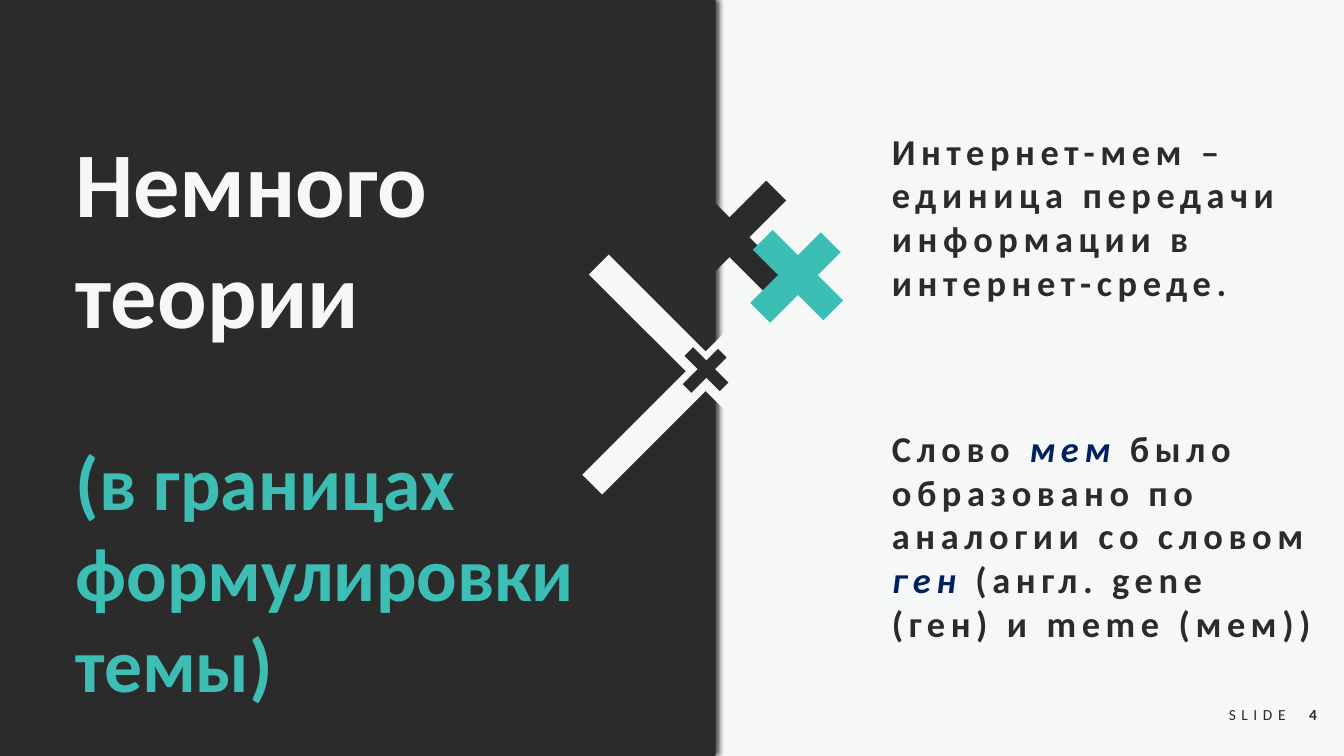
from dataclasses import dataclass

from lxml.etree import SubElement
from pptx import Presentation
from pptx.dml.color import RGBColor
from pptx.enum.shapes import MSO_CONNECTOR as CONN, MSO_SHAPE as SHAPE
from pptx.enum.text import MSO_ANCHOR as ANCHOR, PP_ALIGN as ALIGN
from pptx.oxml.ns import qn
from pptx.util import Inches, Pt

COLS, ROWS = 32, 18
CELL = Inches(7.5) / ROWS


@dataclass(frozen=True)
class Theme:
    font: str = "Calibri"
    dark: str = "2B2B2B"
    light: str = "F6F8F8"
    teal: str = "3CBEB4"
    navy: str = "002060"
    title: int = 66
    subtitle: int = 54
    body: int = 26
    footer: int = 11
    tracking: int = 4
    thick: float = 20
    thin: float = 8.75


T = Theme()


def rgb(color):
    return RGBColor.from_string(color)


def grid(*cells):
    """Turn counts of square grid cells into slide lengths."""
    return [round(c * CELL) for c in cells]


def style(font, size, color, bold=True):
    font.name, font.size, font.bold = T.font, Pt(size), bold
    font.color.rgb = rgb(color)


def add_panel(s, box):
    panel = s.shapes.add_shape(SHAPE.RECTANGLE, *grid(*box))
    panel.fill.solid()
    panel.fill.fore_color.rgb = rgb(T.dark)
    panel.line.fill.background()
    panel.shadow.inherit = False
    effects = panel.element.spPr.find(qn("a:effectLst"))
    shadow = SubElement(effects, qn("a:outerShdw"), blurRad=str(Pt(4)),
                        dist=str(Pt(3)), dir="0", algn="l", rotWithShape="0")
    black = SubElement(shadow, qn("a:srgbClr"), val="000000")
    SubElement(black, qn("a:alpha"), val="69000")
    s.shapes.title.element.addprevious(panel.element)


def fill_title(s, box, heading, subheading):
    title = s.shapes.title
    title.left, title.top, title.width, title.height = grid(*box)
    tf = title.text_frame
    tf.word_wrap, tf.vertical_anchor = True, ANCHOR.TOP
    lines = ((heading, T.title, T.light, 63), (subheading, T.subtitle, T.teal, 12))
    tf.text = "\n".join(line[0] for line in lines)
    for p, (_, size, color, after) in zip(tf.paragraphs, lines):
        p.alignment, p.space_before, p.space_after = ALIGN.LEFT, Pt(0), Pt(after)
        style(p.font, size, color)


def add_text(s, box, parts, size, bold=True, tracking=0, align=ALIGN.LEFT,
             anchor=ANCHOR.TOP, wrap=True):
    """Add one paragraph; parts between asterisks are navy italics."""
    tf = s.shapes.add_textbox(*grid(*box)).text_frame
    tf.word_wrap, tf.vertical_anchor = wrap, anchor
    p = tf.paragraphs[0]
    p.alignment = align
    style(p.font, size, T.dark, bold)
    for i, part in enumerate(parts.split("*")):
        r = p.add_run()
        r.text = part
        if tracking:
            r.font._element.set("spc", str(tracking * 100))
        if i % 2:
            r.font.italic = True
            r.font.color.rgb = rgb(T.navy)


def add_cross(s, cx, cy, half, shift, color, width):
    """Cross two diagonals whose middles lie shift cells either side of the centre."""
    for side in (-1, 1):
        x, y = cx + side * shift, cy - side * shift
        line = s.shapes.add_connector(CONN.STRAIGHT, *grid(
            x + half, y + side * half, x - half, y - side * half))
        line.line.color.rgb = rgb(color)
        line.line.width = Pt(width)
        SubElement(line.element.spPr, qn("a:effectLst"))


def main():
    prs = Presentation()
    prs.slide_width, prs.slide_height = grid(COLS, ROWS)
    s = prs.slides.add_slide(prs.slide_layouts[5])
    s.background.fill.solid()
    s.background.fill.fore_color.rgb = rgb(T.light)

    add_panel(s, (0, 0, 17.04, ROWS))
    fill_title(s, (1.56, 2.86, 14.3, 14.21),
               "Немного теории", "(в границах формулировки темы)")
    add_text(s, (30.7, 16.46, 1.13, 1.08), "4", T.footer,
             align=ALIGN.CENTER, anchor=ANCHOR.MIDDLE)
    add_text(s, (28.82, 16.68, 2.23, 0.7), "SLIDE", T.footer, bold=False,
             tracking=T.tracking, align=ALIGN.CENTER, wrap=False)
    add_text(s, (21, 2.95, 10.18, 5.5),
             "Интернет-мем ‒ единица передачи информации в интернет-среде.",
             T.body, tracking=T.tracking)
    add_text(s, (21, 10.03, 10.68, 6.55),
             "Слово *мем* было образовано по аналогии со словом *ген*"
             " (англ. gene (ген) и meme (мем))",
             T.body, tracking=T.tracking)

    for cross in (
        (16.72, 8.92, 2.54, 0.08, T.light, T.thick),
        (16.8, 8.81, 0.42, 0.02, T.dark, T.thin),
        (17.33, 5.69, 1.19, 0.04, T.dark, T.thick),
        (18.97, 6.58, 0.84, 0.03, T.teal, T.thick),
    ):
        add_cross(s, *cross)
    prs.save("out.pptx")


if __name__ == "__main__":
    main()
